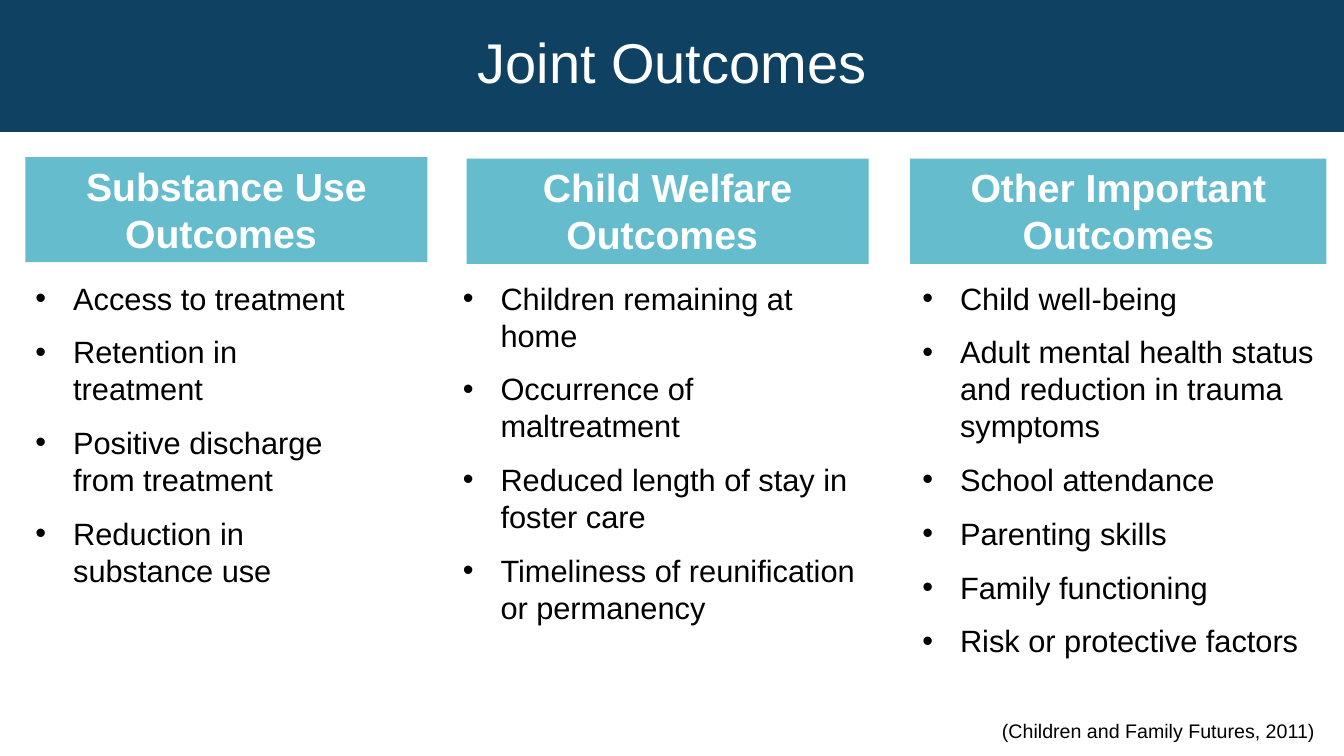
from lxml import etree
from pptx import Presentation
from pptx.dml.color import RGBColor
from pptx.enum.shapes import MSO_SHAPE
from pptx.enum.text import MSO_ANCHOR, MSO_AUTO_SIZE, PP_ALIGN
from pptx.oxml.ns import qn
from pptx.util import Cm, Pt

TITLE = "Joint Outcomes"
CITATION = "(Children and Family Futures, 2011)"
# Boxes are left, top, width, height in centimetres.
COLUMNS = [
    {
        "heading": "Substance Use Outcomes ",
        "heading_box": (0.64, 3.96, 10.13, 2.65),
        "list_box": (0.64, 6.91, 8.86, 8.13),
        "items": [
            "Access to treatment",
            "Retention in treatment",
            "Positive discharge from treatment",
            "Reduction in substance use",
        ],
    },
    {
        "heading": "Child Welfare Outcomes ",
        "heading_box": (11.76, 4, 10.13, 2.65),
        "list_box": (11.41, 6.91, 10.49, 9.07),
        "items": [
            "Children remaining at home",
            "Occurrence of maltreatment",
            "Reduced length of stay in foster care",
            "Timeliness of reunification or permanency",
        ],
    },
    {
        "heading": "Other Important Outcomes",
        "heading_box": (22.94, 4, 10.49, 2.65),
        "list_box": (22.99, 6.91, 10.44, 9.91),
        "items": [
            "Child well-being",
            "Adult mental health status and reduction in trauma symptoms",
            "School attendance",
            "Parenting skills",
            "Family functioning",
            "Risk or protective factors",
        ],
    },
]
TITLE_BOX = (0, 0, 33.87, 3.3)
CITATION_BOX = (25, 17.98, 8.43, 0.86)

COLORS = {"navy": "0F4162", "teal": "65BCCD", "white": "FFFFFF", "black": "000000"}
FONT = "Arial"
COMPARISON_LAYOUT = 4
LIST_PLACEHOLDERS = (1, 2, 4)
UNUSED_PLACEHOLDER = 3
BULLET_INDENT = Cm(0.95)
ITEM_SPACE = Pt(6)
CENTER = PP_ALIGN.CENTER
LEFT = PP_ALIGN.LEFT
TOP = MSO_ANCHOR.TOP
MIDDLE = MSO_ANCHOR.MIDDLE
NO_AUTOFIT = MSO_AUTO_SIZE.NONE
RECTANGLE = MSO_SHAPE.RECTANGLE


def color(name):
    return RGBColor.from_string(COLORS[name])


def place(shape, box):
    shape.left, shape.top, shape.width, shape.height = map(Cm, box)


def prepare_frame(shape, anchor, wrap=True):
    frame = shape.text_frame
    frame.auto_size = NO_AUTOFIT
    frame.word_wrap = wrap
    frame.vertical_anchor = anchor
    return frame


def write(para, text, size, color_name, align, bold=False):
    para.alignment = align
    span = para.add_run()
    span.text = text
    span.font.name = FONT
    span.font.size = Pt(size)
    span.font.bold = bold
    span.font.color.rgb = color(color_name)


def add_bullet(para):
    properties = para._p.get_or_add_pPr()
    properties.set("marL", str(BULLET_INDENT))
    properties.set("indent", str(-BULLET_INDENT))
    etree.SubElement(properties, qn("a:buFont"), typeface=FONT)
    etree.SubElement(properties, qn("a:buChar"), char="•")


def fill_title(title):
    place(title, TITLE_BOX)
    title.fill.solid()
    title.fill.fore_color.rgb = color("navy")
    title.line.color.rgb = color("navy")
    title.line.width = Pt(1)
    para = prepare_frame(title, MIDDLE).paragraphs[0]
    para.line_spacing = 0.9
    write(para, TITLE, 40, "white", CENTER)


def fill_list(body, box, items):
    place(body, box)
    frame = prepare_frame(body, TOP)
    for number, item in enumerate(items):
        para = frame.add_paragraph() if number else frame.paragraphs[0]
        add_bullet(para)
        para.space_before = ITEM_SPACE if number else Pt(0)
        para.space_after = ITEM_SPACE
        write(para, item, 22, "black", LEFT)


def add_heading(page, box, text):
    heading = page.shapes.add_shape(RECTANGLE, *map(Cm, box))
    heading.shadow.inherit = False
    heading.fill.solid()
    heading.fill.fore_color.rgb = color("teal")
    heading.line.fill.background()
    para = prepare_frame(heading, TOP).paragraphs[0]
    write(para, text, 28, "white", CENTER, bold=True)


def main():
    deck = Presentation()
    deck.slide_width, deck.slide_height = Cm(33.87), Cm(19.05)
    page = deck.slides.add_slide(deck.slide_layouts[COMPARISON_LAYOUT])
    bodies = {body.placeholder_format.idx: body for body in page.placeholders}

    fill_title(page.shapes.title)
    for idx, column in zip(LIST_PLACEHOLDERS, COLUMNS):
        fill_list(bodies[idx], column["list_box"], column["items"])
        add_heading(page, column["heading_box"], column["heading"])
    unused = bodies[UNUSED_PLACEHOLDER].element
    unused.getparent().remove(unused)

    citation = page.shapes.add_textbox(*map(Cm, CITATION_BOX))
    para = prepare_frame(citation, TOP, wrap=False).paragraphs[0]
    write(para, CITATION, 14, "black", LEFT)

    deck.save("out.pptx")


if __name__ == "__main__":
    main()
